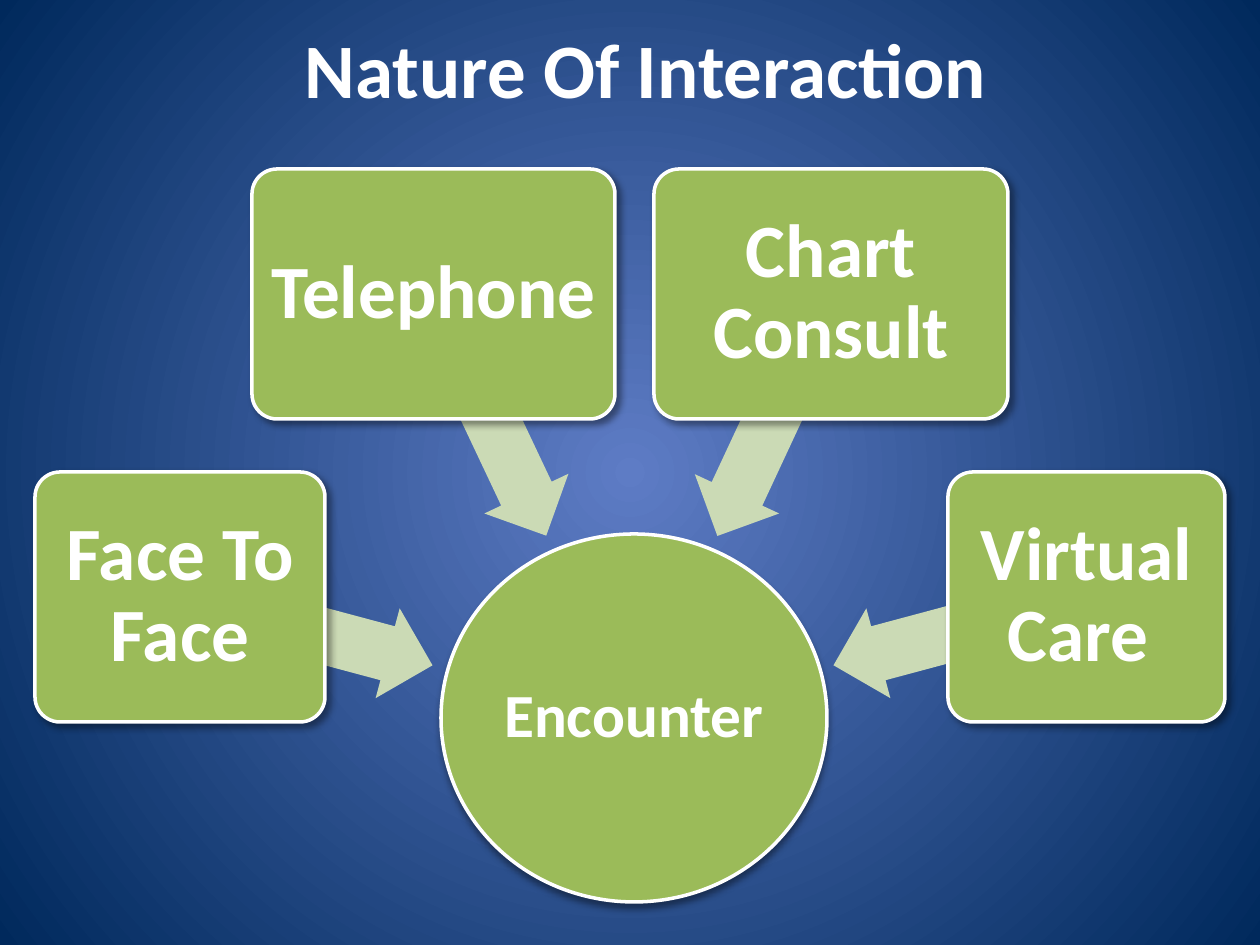
"""Builds the Nature Of Interaction slide: four contact types leading to an encounter."""
from lxml import etree
from pptx import Presentation
from pptx import util as u
from pptx.dml.color import RGBColor
from pptx.enum import shapes, text
from pptx.oxml import ns, parse_xml

PX = 914400 / 126
WHITE, GREEN, PALE = "FFFFFF", "9BBB59", "CBDAB5"


def rgb(code):
    return RGBColor.from_string(code)


def add_node(kind, bounds, label, size, inset, angle):
    node = slide.shapes.add_shape(kind, *[round(n * PX) for n in bounds])
    node.fill.solid()
    node.fill.fore_color.rgb = rgb(GREEN)
    node.line.color.rgb = rgb(WHITE)
    node.line.width = u.Pt(2)
    node._element.spPr.append(parse_xml(
        f'<a:effectLst {ns.nsdecls("a")}><a:outerShdw blurRad="{u.Pt(4)}" '
        f'dist="{u.Pt(3)}" dir="{angle * 60000}" rotWithShape="0"><a:srgbClr val="000000">'
        '<a:alpha val="40000"/></a:srgbClr></a:outerShdw></a:effectLst>'))
    frame = node.text_frame
    frame.word_wrap = True
    frame.vertical_anchor = text.MSO_ANCHOR.MIDDLE
    frame.margin_left = frame.margin_right = round(inset * PX)
    frame.margin_top = frame.margin_bottom = round(inset * PX)
    line = frame.paragraphs[0]
    line.alignment = text.PP_ALIGN.CENTER
    line.line_spacing = 0.9
    run = line.add_run()
    run.text = label
    run.font.name, run.font.size, run.font.bold = "Calibri", u.Pt(size), True
    run.font.color.rgb = rgb(WHITE)
    return node


deck = Presentation()
deck.slide_width, deck.slide_height = u.Inches(10), u.Inches(7.5)
slide = deck.slides.add_slide(deck.slide_layouts[5])

backdrop = slide.background.fill
backdrop.gradient()
for stop, code in zip(backdrop.gradient_stops, ("5E7CC5", "00295C")):
    stop.color.rgb = rgb(code)
direction = slide._element.find(".//" + ns.qn("a:lin"))
circle = etree.Element(ns.qn("a:path"), path="circle")
etree.SubElement(circle, ns.qn("a:fillToRect"), l="50000", t="50000", r="50000", b="50000")
direction.getparent().replace(direction, circle)

title = slide.shapes.title
title.left, title.top, title.width, title.height = [round(n * PX) for n in (84, 0, 1124, 136)]
title.text_frame.vertical_anchor = text.MSO_ANCHOR.MIDDLE
heading = title.text_frame.paragraphs[0]
heading.alignment = text.PP_ALIGN.CENTER
heading_run = heading.add_run()
heading_run.text = "Nature Of Interaction"
heading_run.font.name, heading_run.font.size, heading_run.font.bold = "Calibri", u.Pt(44), True
heading_run.font.color.rgb = rgb(WHITE)

add_node(shapes.MSO_SHAPE.OVAL, (441, 534, 386, 368), "Encounter", 35, 3, 90)

contacts = [
    ("Face To Face", (35, 472, 290), (176, 585, 261), 195),
    ("Telephone", (252, 169, 363), (355, 368, 268), 244.7),
    ("Chart Consult", (654, 169, 354), (640, 368, 268), 295),
    ("Virtual Care ", (948, 472, 277), (829, 585, 261), 345),
]
for label, box, pointer, turn in contacts:
    arrow = slide.shapes.add_shape(
        shapes.MSO_SHAPE.LEFT_ARROW, *[round(n * PX) for n in (*pointer, 93)])
    arrow.adjustments[0], arrow.adjustments[1] = 0.6, 0.5
    arrow.rotation = turn
    arrow.fill.solid()
    arrow.fill.fore_color.rgb = rgb(PALE)
    arrow.line.fill.background()
    arrow.shadow.inherit = False
    contact = add_node(shapes.MSO_SHAPE.ROUNDED_RECTANGLE, (*box, 250), label, 43, 11, 45)
    contact.adjustments[0] = 0.1

deck.save("out.pptx")
